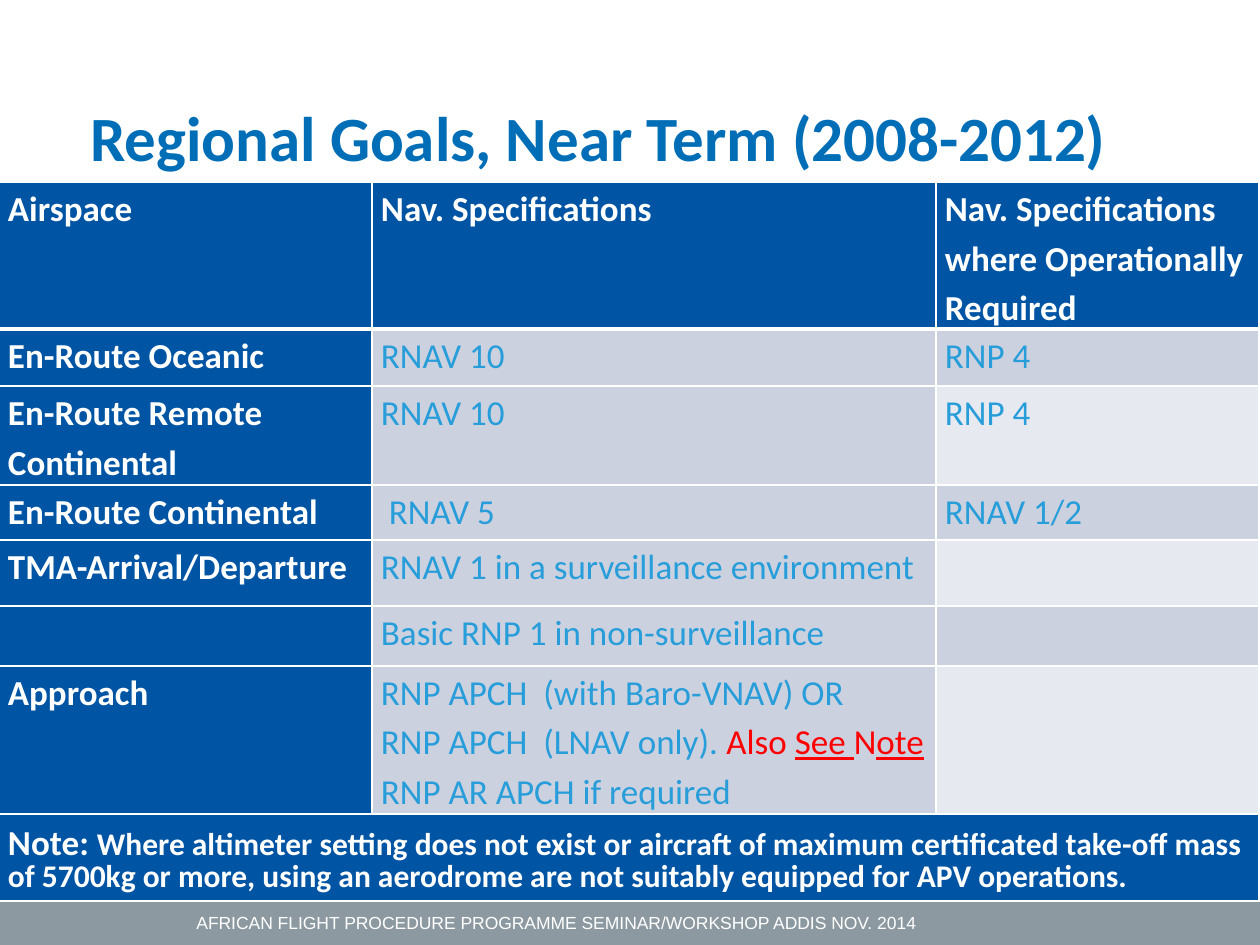
from lxml import etree
from pptx import Presentation
from pptx import util as u
from pptx.dml.color import RGBColor
from pptx.enum import shapes, text
from pptx.oxml.ns import qn

PX = u.Inches(1) / 126
COLORS = {"white": "FFFFFF", "title": "006EB7", "navy": "0054A4", "sky": "279DD9",
          "red": "FF0000", "band": "CCD1E0", "pale": "E7E9F0", "footer": "8C99A1"}


def add_text(para, words, color, size, name="Calibri", **formats):
    span = para.add_run()
    span.text = words
    span.font.color.rgb = RGBColor.from_string(COLORS[color])
    for key, value in {"size": u.Pt(size), "name": name, **formats}.items():
        setattr(span.font, key, value)


def add_borders(cell, widths):
    """Draw white cell edges; widths maps an edge tag to points."""
    properties = cell._tc.get_or_add_tcPr()
    for index, (edge, width) in enumerate(widths.items()):
        line = etree.Element(qn(f"a:{edge}"), w=str(u.Pt(width)))
        fill = etree.SubElement(line, qn("a:solidFill"))
        etree.SubElement(fill, qn("a:srgbClr"), val=COLORS["white"])
        properties.insert(index, line)


deck = Presentation()
deck.slide_width, deck.slide_height = u.Inches(10), u.Inches(7.5)
page = deck.slides.add_slide(deck.slide_layouts[6])

# Footer band
band = page.shapes.add_shape(shapes.MSO_SHAPE.RECTANGLE,
                             *[round(n * PX) for n in (0, 900, 1260, 45)])
band.shadow.inherit = False
band.fill.solid()
band.fill.fore_color.rgb = RGBColor.from_string(COLORS["footer"])
band.line.fill.background()

# Title and footer text
labels = [
    ((0, 86, 1197, 100), "Regional Goals, Near Term (2008-2012)", "title", 36, "Calibri", True),
    ((144, 900, 824, 45), "AFRICAN FLIGHT PROCEDURE PROGRAMME SEMINAR/WORKSHOP ADDIS NOV. 2014",
     "white", 10, "Arial", False),
]
for place, words, color, size, name, bold in labels:
    box = page.shapes.add_textbox(*[round(n * PX) for n in place])
    frame = box.text_frame
    frame.word_wrap = True
    frame.vertical_anchor = text.MSO_ANCHOR.MIDDLE
    para = frame.paragraphs[0]
    para.alignment = text.PP_ALIGN.CENTER
    add_text(para, words, color, size, name, bold=bold)

# Airspace table
rows = [
    ["Airspace", "Nav. Specifications", "Nav. Specifications where Operationally Required"],
    ["En-Route Oceanic", "RNAV 10", "RNP 4"],
    ["En-Route Remote Continental", "RNAV 10", "RNP 4"],
    ["En-Route Continental", " RNAV 5", "RNAV 1/2"],
    ["TMA-Arrival/Departure", "RNAV 1 in a surveillance environment", ""],
    ["", "Basic RNP 1 in non-surveillance", ""],
    ["Approach", "RNP APCH  (with Baro-VNAV) OR\nRNP APCH  (LNAV only). \nRNP AR APCH if required", ""],
    ["", "", ""],
]
col_widths = [373, 564, 323]
row_heights = [147, 57, 99, 55, 66, 60, 148, 87]
note_row = len(rows) - 1
table = page.shapes.add_table(len(rows), len(col_widths), *[
    round(n * PX) for n in (-1, 182, sum(col_widths), sum(row_heights))]).table
for column, width in zip(table.columns, col_widths):
    column.width = round(width * PX)
for row, height in zip(table.rows, row_heights):
    row.height = round(height * PX)

for r, row in enumerate(rows):
    for c, words in enumerate(row):
        cell = table.cell(r, c)
        heading = r in (0, note_row) or c == 0
        cell.margin_left = cell.margin_right = round(9 * PX)
        cell.margin_top = cell.margin_bottom = 0
        fill = "navy" if heading else "pale" if c == 2 and r % 2 == 0 else "band"
        cell.fill.solid()
        cell.fill.fore_color.rgb = RGBColor.from_string(COLORS[fill])
        add_borders(cell, {"lnL": 1, "lnR": 1, "lnT": 3 if r == 1 else 1,
                           "lnB": 3 if r == 0 else 1})
        for i, line in enumerate(words.split("\n") if words else []):
            para = cell.text_frame.paragraphs[0] if i == 0 else cell.text_frame.add_paragraph()
            para.line_spacing = 1.15
            add_text(para, line, "white" if heading else "sky", 20, bold=heading)

# Red pointer to the note
pointer = table.cell(6, 1).text_frame.paragraphs[1]
for words, underline in [("Also ", False), ("See ", True), ("N", False), ("ote", True)]:
    add_text(pointer, words, "red", 20, bold=False, underline=underline)

# Note across the last row
note = table.cell(note_row, 0)
note.merge(table.cell(note_row, 2))
note.margin_top = round(30 * PX)
first = note.text_frame.paragraphs[0]
second = note.text_frame.add_paragraph()
second.space_before = u.Pt(6)
for para in (first, second):
    para.alignment = text.PP_ALIGN.JUSTIFY
    para.line_spacing = u.Pt(12)
add_text(first, "Note: ", "white", 20, bold=True)
add_text(first, "Where altimeter setting does not exist or aircraft of maximum "
         "certificated take-off mass", "white", 18, bold=True)
add_text(second, "of 5700kg or more, using an aerodrome are not suitably equipped "
         "for APV operations.", "white", 18, bold=True)

deck.save("out.pptx")
